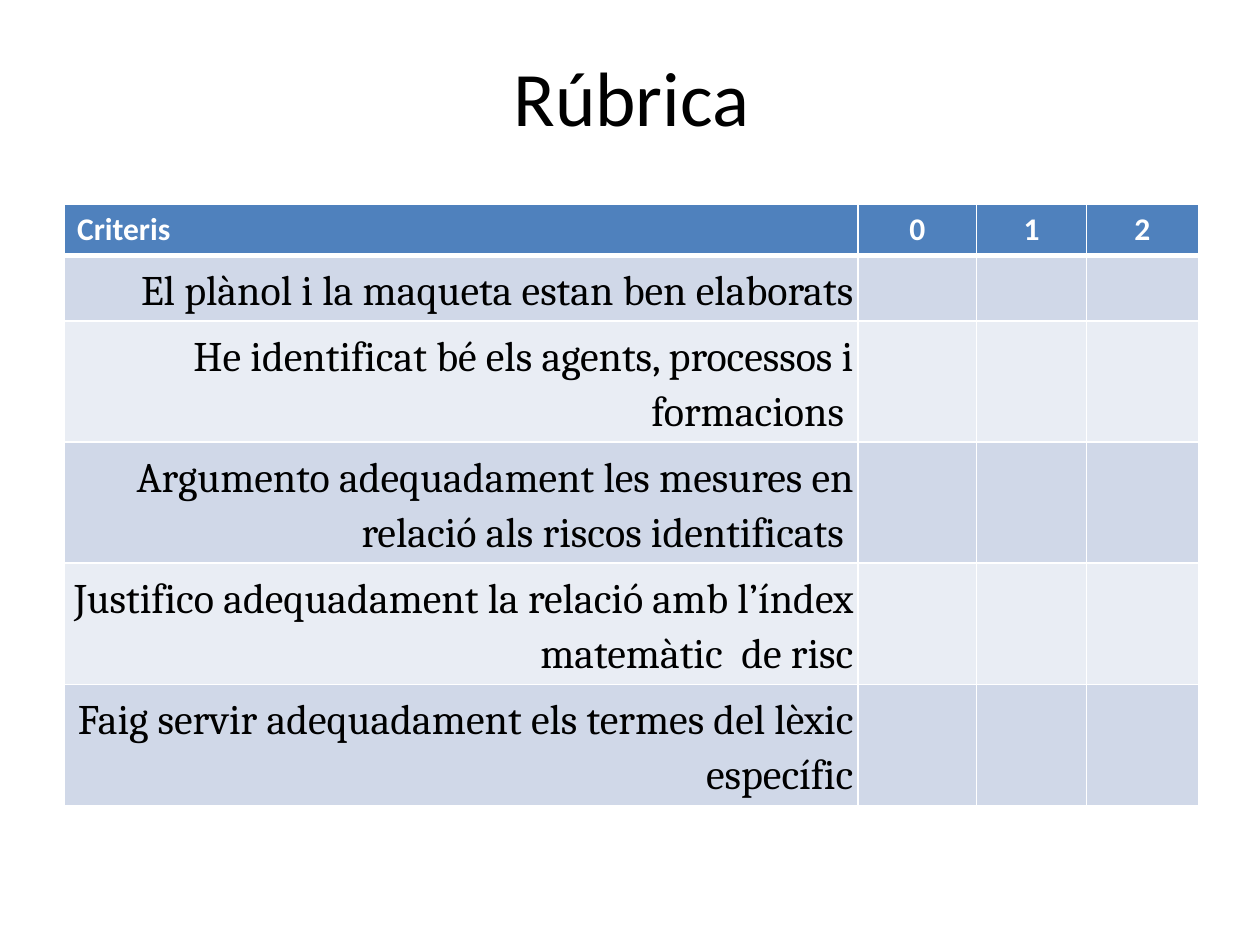
from lxml import etree
from pptx import Presentation
from pptx.dml.color import RGBColor
from pptx.enum.text import MSO_ANCHOR, PP_ALIGN
from pptx.oxml.ns import qn
from pptx.util import Cm, Pt

LEFT, CENTER, RIGHT = PP_ALIGN.LEFT, PP_ALIGN.CENTER, PP_ALIGN.RIGHT
MIDDLE = MSO_ANCHOR.MIDDLE

# Content
TITLE = "Rúbrica"
HEADER = ["Criteris", "0", "1", "2"]
CRITERIA = [
    "El plànol i la maqueta estan ben elaborats",
    "He identificat bé els agents, processos i formacions ",
    "Argumento adequadament les mesures en relació als riscos identificats ",
    "Justifico adequadament la relació amb l’índex matemàtic  de risc",
    "Faig servir adequadament els termes del lèxic específic",
]

# Layout in cm
LEFT_EDGE, WIDTH = 1.3, 22.86
TITLE_TOP, TITLE_HEIGHT = 0.33, 3.18
TABLE_TOP, TABLE_HEIGHT = 4.12, 12.52
COLUMNS = [16, 2.39, 2.21, 2.26]
ROW_HEIGHT = 1.03  # minimum: rows grow with their text
MARGIN = 0.1

# Colours
BLACK, WHITE, HEADER_FILL = "000000", "FFFFFF", "4F81BD"
BANDS = ["D0D8E8", "E9EDF4"]


def rgb(value):
    return RGBColor.from_string(value)


def write(tf, text, size=18, font="Calibri", color=BLACK, bold=False,
          align=LEFT, spacing=None):
    p = tf.paragraphs[0]
    p.alignment = align
    p.line_spacing = spacing
    r = p.add_run()
    r.text = text
    r.font.size, r.font.name, r.font.bold = Pt(size), font, bold
    r.font.color.rgb = rgb(color)


def format_cell(cell, fill, top=1, bottom=1):
    """Give a cell its white borders (widths in points) and its fill."""
    tcPr = cell._tc.get_or_add_tcPr()
    for side, width in (("L", 1), ("R", 1), ("T", top), ("B", bottom)):
        ln = etree.SubElement(tcPr, qn(f"a:ln{side}"), w=str(Pt(width)))
        solid = etree.SubElement(ln, qn("a:solidFill"))
        etree.SubElement(solid, qn("a:srgbClr"), val=WHITE)
    cell.fill.solid()
    cell.fill.fore_color.rgb = rgb(fill)


prs = Presentation()
prs.slide_width, prs.slide_height = Cm(25.4), Cm(19.05)
s = prs.slides.add_slide(prs.slide_layouts[5])

# Title
title = s.shapes.title
title.left, title.top = Cm(LEFT_EDGE), Cm(TITLE_TOP)
title.width, title.height = Cm(WIDTH), Cm(TITLE_HEIGHT)
title.text_frame.vertical_anchor = MIDDLE
write(title.text_frame, TITLE, size=44, align=CENTER)

# Table grid
frame = s.shapes.add_table(len(CRITERIA) + 1, len(HEADER), Cm(LEFT_EDGE),
                           Cm(TABLE_TOP), Cm(WIDTH), Cm(TABLE_HEIGHT))
table = frame.table
for column, width in zip(table.columns, COLUMNS):
    column.width = Cm(width)
for row in table.rows:
    row.height = Cm(ROW_HEIGHT)
frame.height = Cm(TABLE_HEIGHT)

# Header row
for i, text in enumerate(HEADER):
    cell = table.cell(0, i)
    format_cell(cell, HEADER_FILL, bottom=3)
    write(cell.text_frame, text, color=WHITE, bold=True,
          align=CENTER if i else LEFT)

# Criteria rows
for i, text in enumerate(CRITERIA):
    cells = table.rows[i + 1].cells
    for cell in cells:
        format_cell(cell, BANDS[i % 2], top=1 if i else 3)
    cell = cells[0]
    cell.margin_left = cell.margin_right = Cm(MARGIN)
    cell.margin_top = cell.margin_bottom = Cm(MARGIN)
    write(cell.text_frame, text, size=24, font="Cambria", align=RIGHT,
          spacing=1.15)

prs.save("out.pptx")
